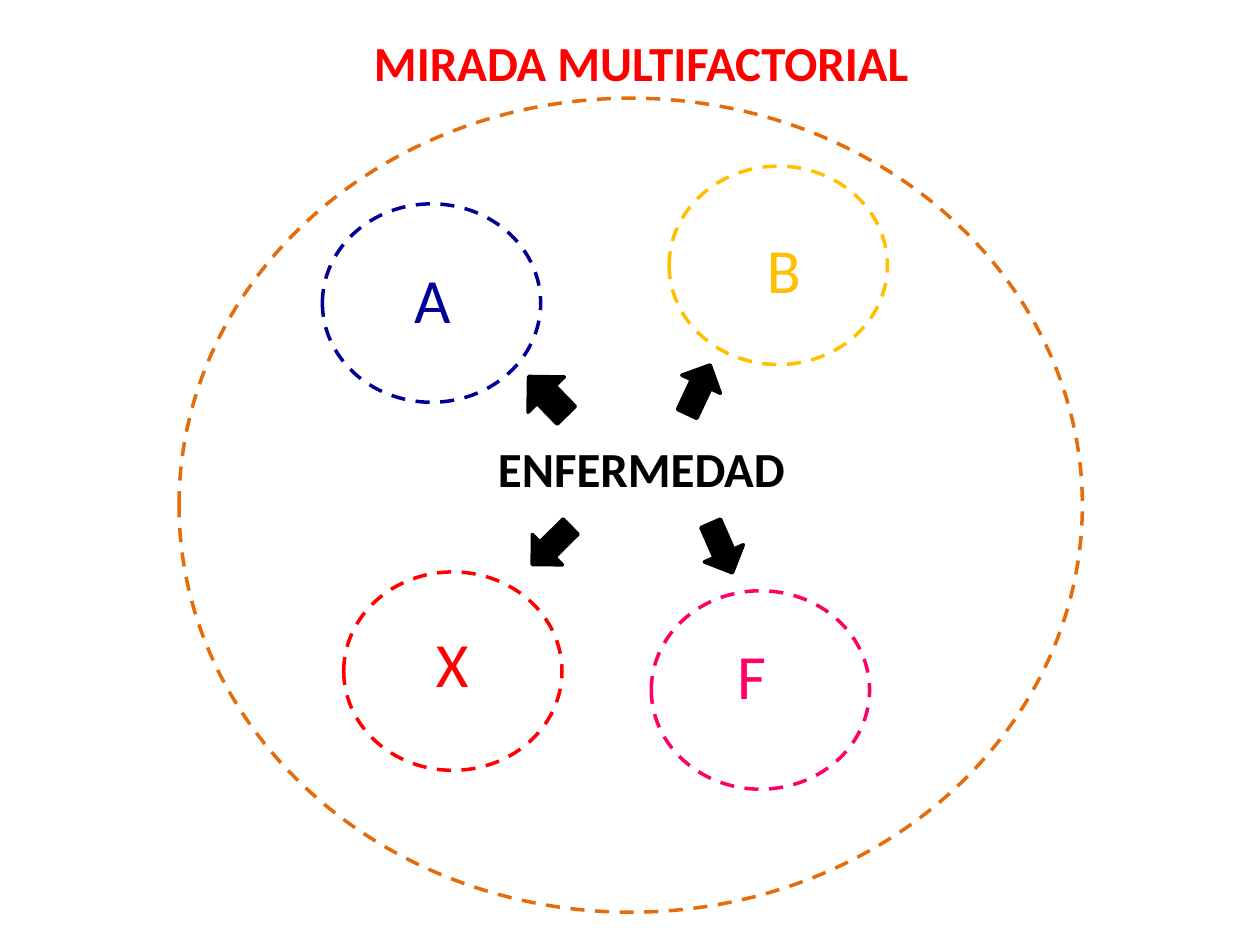
import pptx
import pptx.util
import pptx.dml.color
import pptx.enum.dml
import pptx.enum.shapes
import pptx.enum.text

Cm = pptx.util.Cm
Pt = pptx.util.Pt
RGBColor = pptx.dml.color.RGBColor
Shape = pptx.enum.shapes.MSO_SHAPE
Align = pptx.enum.text.PP_ALIGN

ORANGE = RGBColor(0xE4, 0x6C, 0x0A)
NAVY = RGBColor(0x00, 0x00, 0x99)
GOLD = RGBColor(0xFF, 0xC0, 0x00)
PINK = RGBColor(0xFF, 0x00, 0x66)
RED = RGBColor(0xFF, 0x00, 0x00)
BLACK = RGBColor(0x00, 0x00, 0x00)

# All lengths are in centimetres: left, top, width, height
WHOLE = (3.61, 1.98, 18.21, 16.41)
RING = (4.4, 4.0)
# letter, colour, ring corner, letter box
FACTORS = [
    ("A", NAVY, (6.5, 4.11), (8.1, 5.13, 1.24, 1.8), Align.LEFT),
    ("B", GOLD, (13.49, 3.35), (15.19, 4.52, 1.22, 1.8), Align.CENTER),
    ("F", PINK, (13.13, 11.91), (14.61, 12.7, 1.09, 1.8), Align.CENTER),
    ("X", RED, (6.93, 11.53), (8.53, 12.47, 1.17, 1.8), Align.CENTER),
]
# text, colour, box, alignment, wrap
HEADS = [
    ("MIRADA MULTIFACTORIAL", RED, (7.29, 0.53, 11.63, 1.45), Align.LEFT, False),
    ("ENFERMEDAD", BLACK, (6.4, 8.71, 13.06, 1.45), Align.CENTER, True),
]
# box, rotation in degrees
ARROWS = [
    ((13.54, 7.42, 1.09, 0.86), 295.2),
    ((10.49, 7.47, 1.09, 1.02), 225.8),
    ((14.0, 10.62, 1.09, 0.86), 66.3),
    ((10.57, 10.57, 1.09, 0.86), 135.2),
]

deck = pptx.Presentation()
deck.slide_width, deck.slide_height = Cm(25.4), Cm(19.05)
slide = deck.slides.add_slide(deck.slide_layouts[6])


def add_form(kind, box, color):
    form = slide.shapes.add_shape(kind, *map(Cm, box))
    form.shadow.inherit = False
    form.line.color.rgb = color
    form.line.width = Pt(2)
    return form


def add_ring(box, color):
    ring = add_form(Shape.OVAL, box, color)
    ring.fill.background()
    ring.line.dash_style = pptx.enum.dml.MSO_LINE.DASH


def add_text(text, color, box, align, size, bold=False, wrap=False):
    frame = slide.shapes.add_textbox(*map(Cm, box)).text_frame
    frame.word_wrap = wrap
    frame.auto_size = pptx.enum.text.MSO_AUTO_SIZE.SHAPE_TO_FIT_TEXT
    para = frame.paragraphs[0]
    para.alignment = align
    run = para.add_run()
    run.text = text
    run.font.name = "Calibri"
    run.font.size = Pt(size)
    run.font.bold = bold
    run.font.color.rgb = color


add_ring(WHOLE, ORANGE)
for letter, color, corner, box, align in FACTORS:
    add_ring(corner + RING, color)
    add_text(letter, color, box, align, 36)

for text, color, box, align, wrap in HEADS:
    add_text(text, color, box, align, 28, True, wrap)

for box, angle in ARROWS:
    arrow = add_form(Shape.RIGHT_ARROW, box, BLACK)
    arrow.fill.solid()
    arrow.fill.fore_color.rgb = BLACK
    arrow.rotation = angle

deck.save("out.pptx")
